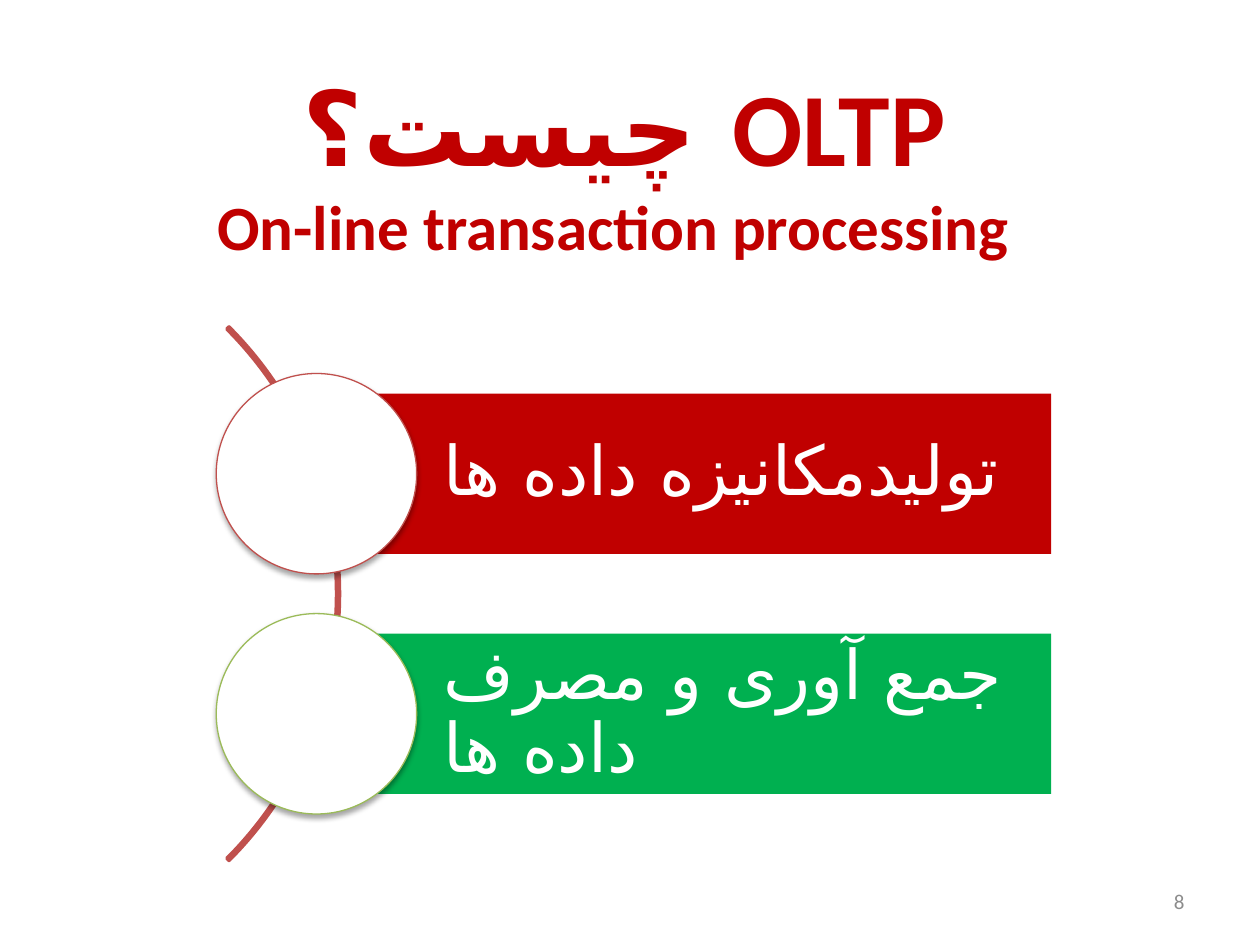
from dataclasses import dataclass

from lxml.etree import SubElement
from pptx import Presentation
from pptx.dml.color import RGBColor
from pptx.enum.shapes import MSO_SHAPE as Preset
from pptx.enum.text import MSO_ANCHOR as Anchor, MSO_AUTO_SIZE as AutoSize, PP_ALIGN as Align
from pptx.oxml.ns import qn
from pptx.util import Cm, Pt

RED = RGBColor(0xC0, 0x00, 0x00)
GREEN = RGBColor(0x00, 0xB0, 0x50)
ARC_RED = RGBColor(0xC0, 0x50, 0x4D)
OLIVE = RGBColor(0x9B, 0xBB, 0x59)
WHITE = RGBColor(0xFF, 0xFF, 0xFF)
GREY = RGBColor(0x8C, 0x8C, 0x8C)
FONT = "Calibri"
PERSIAN_FONT = "DejaVu Sans"  # Calibri has no Persian letters

# Geometry in centimetres
BAR_LEFT, BAR_WIDTH, BAR_HEIGHT = 6.38, 14.81, 3.23
CIRCLE = 4.04
ARC_X, ARC_Y, ARC_SIZE = -0.76, 11.97, 15.21
PITCH = 4.84


@dataclass
class Step:
    text: str
    fill: RGBColor
    outline: RGBColor


STEPS = [
    Step("تولیدمکانیزه داده ها", RED, ARC_RED),
    Step("جمع آوری و مصرف داده ها", GREEN, OLIVE),
]


def add_run(paragraph, text: str, size: float, color: RGBColor, bold: bool = False) -> None:
    run = paragraph.add_run()
    run.text = text
    font = run.font
    font.name, font.size, font.bold = FONT, Pt(size), bold
    font.color.rgb = color
    SubElement(run._r.get_or_add_rPr(), qn("a:cs"), typeface=PERSIAN_FONT)


def set_rtl(paragraph, align: Align) -> None:
    paragraph.alignment = align
    paragraph._p.get_or_add_pPr().set("rtl", "1")


def add_shadow(shape) -> None:
    effects = shape._element.spPr.find(qn("a:effectLst"))
    shadow = SubElement(effects, qn("a:outerShdw"), blurRad=str(Pt(3.1)),
                        dist=str(Pt(1.8)), dir="5400000", rotWithShape="0")
    color = SubElement(shadow, qn("a:srgbClr"), val="000000")
    SubElement(color, qn("a:alpha"), val="35000")


def add_centred(slide, preset: Preset, x: float, y: float, size: float,
                outline: RGBColor, weight: float):
    shape = slide.shapes.add_shape(preset, Cm(x - size / 2), Cm(y - size / 2), Cm(size), Cm(size))
    shape.shadow.inherit = False
    shape.line.color.rgb = outline
    shape.line.width = Pt(weight)
    return shape


def add_step(slide, step: Step, middle: float) -> None:
    bar = slide.shapes.add_shape(Preset.RECTANGLE, Cm(BAR_LEFT), Cm(middle - BAR_HEIGHT / 2),
                                 Cm(BAR_WIDTH), Cm(BAR_HEIGHT))
    bar.shadow.inherit = False
    bar.fill.solid()
    bar.fill.fore_color.rgb = step.fill
    bar.line.fill.background()

    frame = bar.text_frame
    frame.word_wrap = True
    frame.vertical_anchor = Anchor.MIDDLE
    frame.margin_left = Cm(2.57)
    frame.margin_top = frame.margin_right = frame.margin_bottom = Cm(0.28)
    label = frame.paragraphs[0]
    set_rtl(label, Align.LEFT)
    label.line_spacing = 0.9
    add_run(label, step.text, 39, WHITE)

    circle = add_centred(slide, Preset.OVAL, BAR_LEFT, middle, CIRCLE, step.outline, 0.75)
    circle.fill.solid()
    circle.fill.fore_color.rgb = WHITE
    add_shadow(circle)


def main() -> None:
    prs = Presentation()
    prs.slide_width, prs.slide_height = Cm(25.4), Cm(19.05)
    slide = prs.slides.add_slide(prs.slide_layouts[5])

    # Title
    title = slide.shapes.title
    title.left, title.top, title.width, title.height = Cm(3.81), Cm(1.7), Cm(17.55), Cm(3.18)
    title.text_frame.auto_size = AutoSize.NONE
    title.text_frame.vertical_anchor = Anchor.MIDDLE
    heading = title.text_frame.paragraphs[0]
    set_rtl(heading, Align.CENTER)
    add_run(heading, "OLTP چیست؟", 59.4, RED, bold=True)
    heading.add_line_break()
    add_run(heading, " On-line transaction processing", 36, RED, bold=True)

    # Arc from 315 to 45 degrees behind the steps
    arc = add_centred(slide, Preset.BLOCK_ARC, ARC_X, ARC_Y, ARC_SIZE, ARC_RED, 2)
    arc.fill.background()
    for index, value in enumerate((189, 27, 0.004)):
        arc.adjustments[index] = value

    # Steps, spread evenly about the arc's centre
    for index, step in enumerate(STEPS):
        add_step(slide, step, ARC_Y + (index - (len(STEPS) - 1) / 2) * PITCH)

    # Slide number
    number = slide.shapes.add_textbox(Cm(18.21), Cm(17.65), Cm(5.92), Cm(1.02)).text_frame
    number.word_wrap = True
    number.vertical_anchor = Anchor.MIDDLE
    number.paragraphs[0].alignment = Align.RIGHT
    add_run(number.paragraphs[0], "8", 12, GREY)

    prs.save("out.pptx")


if __name__ == "__main__":
    main()
